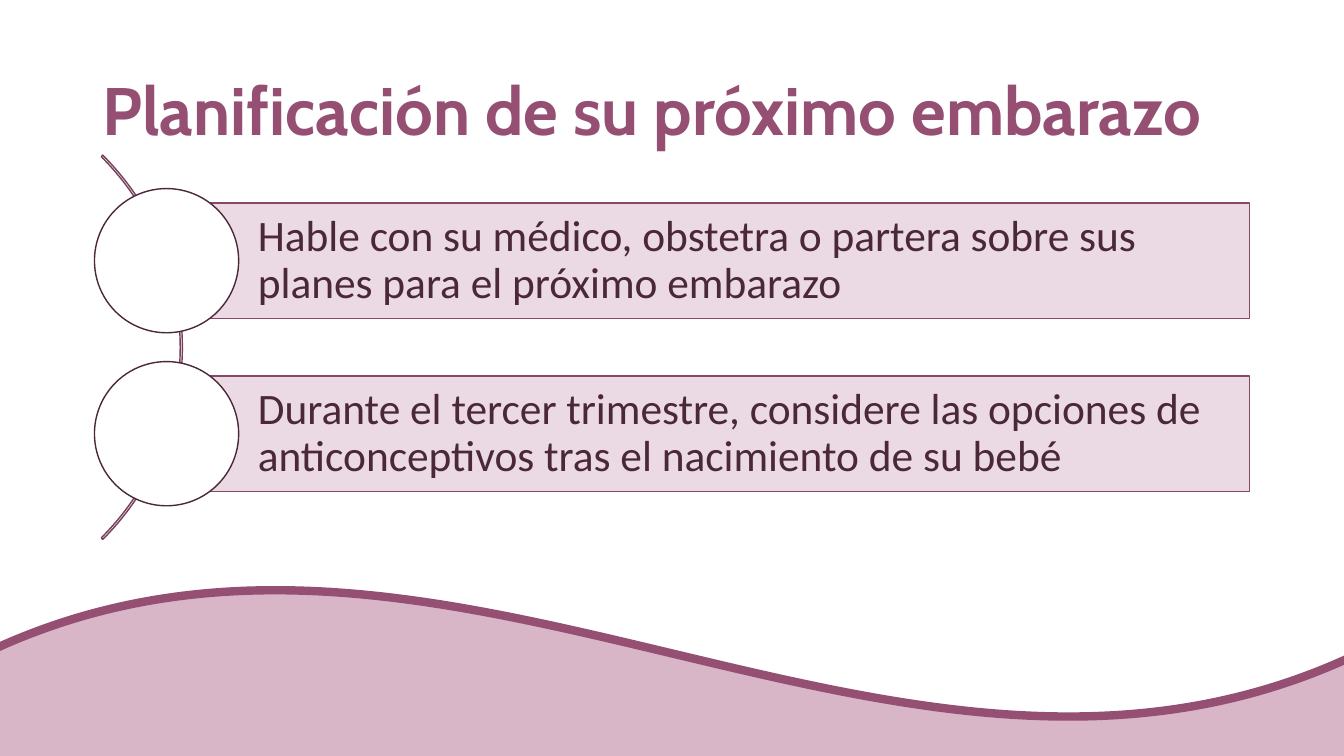
import pptx
import pptx.dml.color
import pptx.enum.shapes
import pptx.enum.text
import pptx.util

Pt = pptx.util.Pt
Shapes = pptx.enum.shapes.MSO_SHAPE


def color(value):
    return pptx.dml.color.RGBColor.from_string(value)


class SlideBuilder:
    """Holds the style and the current slide, and adds its elements."""

    plum = "954F72"
    dark = "4A2839"
    arc_line = "773F5B"
    bar_line = "874867"
    bar_fill = "EBDAE3"
    wave_fill = "D8B5C7"
    white = "FFFFFF"

    def __init__(self, presentation):
        self.slide = presentation.slides.add_slide(presentation.slide_layouts[5])

    def shape(self, kind, left, top, width, height, fill, line, weight=1):
        shape = self.slide.shapes.add_shape(kind, Pt(left), Pt(top), Pt(width), Pt(height))
        shape.shadow.inherit = False
        if fill:
            shape.fill.solid()
            shape.fill.fore_color.rgb = color(fill)
        else:
            shape.fill.background()
        shape.line.color.rgb = color(line)
        shape.line.width = Pt(weight)
        return shape

    def label(self, shape, text, font, size, ink, bold=False):
        frame = shape.text_frame
        frame.text = text
        frame.word_wrap = True
        frame.auto_size = pptx.enum.text.MSO_AUTO_SIZE.NONE
        frame.vertical_anchor = pptx.enum.text.MSO_ANCHOR.MIDDLE
        paragraph = frame.paragraphs[0]
        paragraph.alignment = pptx.enum.text.PP_ALIGN.LEFT
        paragraph.line_spacing = 0.9
        paragraph.space_before = Pt(0)
        for run in paragraph.runs:
            run.font.name = font
            run.font.size = Pt(size)
            run.font.bold = bold
            run.font.color.rgb = color(ink)

    def title(self, text):
        title = self.slide.shapes.title
        title.left, title.top, title.width, title.height = Pt(66), Pt(28.75), Pt(828), Pt(104.4)
        self.label(title, text, "Cabin", 48, self.plum, bold=True)

    def wave(self):
        self.shape(Shapes.WAVE, -10.8, 419.8, 981.4, 375.1, self.wave_fill, self.plum, 6)

    def arc(self):
        arc = self.shape(Shapes.BLOCK_ARC, -257.8, 54, 388.1, 388.1, None, self.arc_line)
        for index, value in enumerate((189, 27, 0.004)):
            arc.adjustments[index] = value

    def item(self, top, text):
        bar = self.shape(Shapes.RECTANGLE, 118.8, top, 773.6, 82.4, self.bar_fill, self.bar_line)
        frame = bar.text_frame
        frame.margin_left = Pt(65.4)
        frame.margin_top = frame.margin_right = frame.margin_bottom = Pt(6.5)
        self.label(bar, text, "Calibri", 31, self.dark)
        self.shape(Shapes.OVAL, 67.5, top - 10.3, 103, 103, self.white, self.dark)


def main():
    presentation = pptx.Presentation()
    presentation.slide_width = Pt(960)
    presentation.slide_height = Pt(540)
    builder = SlideBuilder(presentation)
    builder.wave()
    builder.title("Planificación de su próximo embarazo")
    builder.arc()
    items = (
        "Hable con su médico, obstetra o partera sobre sus planes para el próximo embarazo",
        "Durante el tercer trimestre, considere las opciones de anticonceptivos tras el nacimiento de su bebé",
    )
    for index, text in enumerate(items):
        builder.item(145 + index * 123.6, text)
    presentation.save("out.pptx")


if __name__ == "__main__":
    main()
